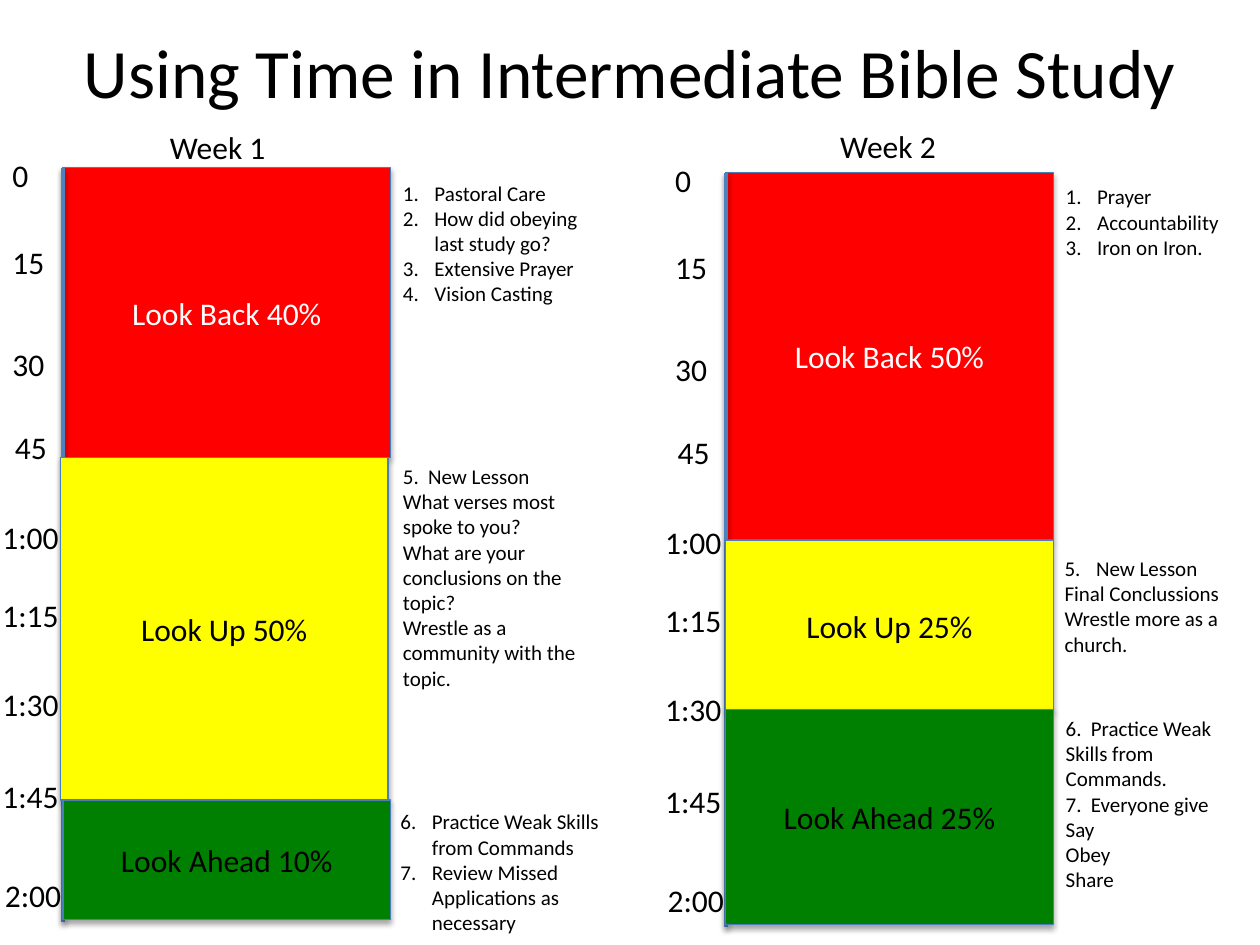
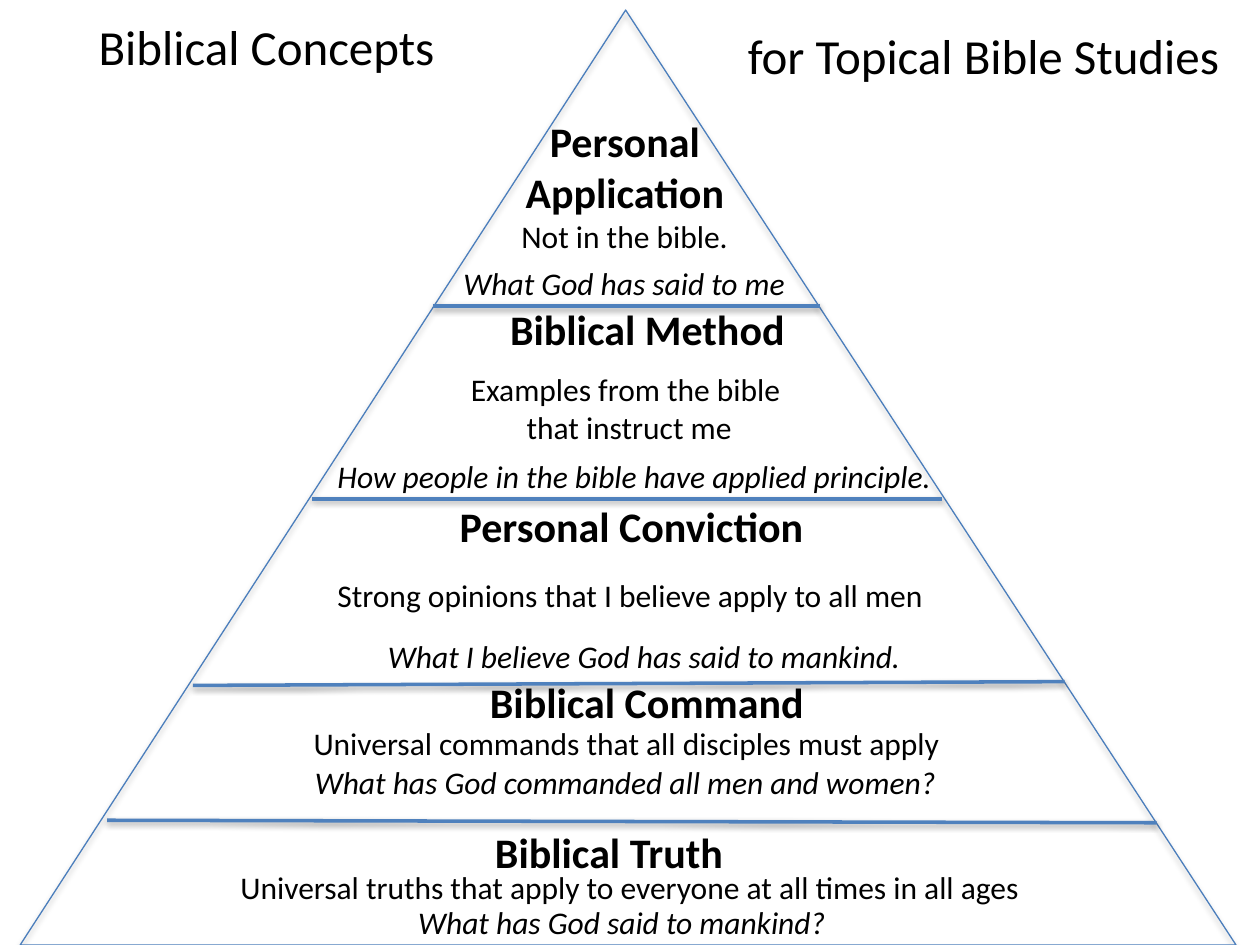
from lxml import etree
from pptx import Presentation
from pptx.dml.color import RGBColor
from pptx.enum.shapes import MSO_CONNECTOR, MSO_SHAPE
from pptx.enum.text import MSO_ANCHOR, MSO_AUTO_SIZE, PP_ALIGN
from pptx.oxml.ns import qn
from pptx.util import Emu, Pt

RECT, TRIANGLE = MSO_SHAPE.RECTANGLE, MSO_SHAPE.ISOSCELES_TRIANGLE
STRAIGHT = MSO_CONNECTOR.STRAIGHT
LEFT, CENTER = PP_ALIGN.LEFT, PP_ALIGN.CENTER
MIDDLE = MSO_ANCHOR.MIDDLE
GROW, FIXED = MSO_AUTO_SIZE.SHAPE_TO_FIT_TEXT, MSO_AUTO_SIZE.NONE

BLACK = RGBColor(0x00, 0x00, 0x00)
WHITE = RGBColor(0xFF, 0xFF, 0xFF)
RED = RGBColor(0xFF, 0x00, 0x00)
YELLOW = RGBColor(0xFF, 0xFF, 0x00)
GREEN = RGBColor(0x00, 0x80, 0x00)
EDGE = RGBColor(0x4B, 0x7E, 0xBC)
RULE = RGBColor(0x4F, 0x81, 0xBD)

FONT = "Calibri"
SCALE = 9144  # EMU in one px, 100 px to the inch
TITLE_ONLY = 5

# Time marks of week 1: text, left, top, width
MARKS = [
    ("0", 0, 119, 33), ("15", 0, 188, 46), ("30", 0, 269, 46),
    ("45", 2, 335, 46), ("1:00", -8, 406, 65), ("1:15", -8, 468, 65),
    ("1:30", -8, 539, 65), ("1:45", -8, 612, 65), ("2:00", -6, 690, 65),
]

# Blocks: text, fill, ink, box. Notes: box, first number, numbered lines, lines
WEEKS = [
    dict(
        name="Week 1", head=(125, 97, 98, 40), shift=(0, 0),
        blocks=[
            ("Look Back 40%", RED, WHITE, (50, 133, 260, 230)),
            ("Look Up 50%", YELLOW, BLACK, (48, 363, 260, 272)),
            ("Look Ahead 10%", GREEN, BLACK, (50, 635, 260, 95)),
        ],
        notes=[
            ((310, 138, 174, 111), 1, 4,
             ["Pastoral Care", "How did obeying last study go?",
              "Extensive Prayer", "Vision Casting"]),
            ((310, 363, 174, 192), 0, 0,
             ["5.\tNew Lesson", "What verses most spoke to you?",
              "What are your conclusions on the topic?",
              "Wrestle as a community with the topic."]),
            ((308, 637, 210, 131), 6, 2,
             ["Practice Weak Skills from Commands",
              "Review Missed Applications as necessary"]),
        ],
    ),
    dict(
        name="Week 2", head=(657, 96, 98, 40), shift=(526, 4),
        blocks=[
            ("Look Back 50%", RED, WHITE, (576, 137, 260, 291)),
            ("Look Up 25%", YELLOW, BLACK, (576, 429, 260, 135)),
            ("Look Ahead 25%", GREEN, BLACK, (576, 563, 260, 171)),
        ],
        notes=[
            ((836, 141, 146, 71), 1, 3,
             ["Prayer", "Accountability", "Iron on Iron."]),
            ((835, 436, 165, 91), 5, 1,
             ["New Lesson", "Final Conclussions",
              "Wrestle more as a church."]),
            ((836, 563, 146, 151), 0, 0,
             ["6.\tPractice Weak Skills from Commands.",
              "7.\tEveryone give", "Say", "Obey", "Share"]),
        ],
    ),
]

# Pyramid levels: (text, box) for the heading, the meaning and the question
LEVELS = [
    ((["Personal", "Application"], (406, 87, 180, 91)),
     (["Not in the bible."], (404, 167, 186, 40)),
     (["What God has said to me"], (358, 205, 284, 40))),
    ((["Biblical Method"], (395, 236, 241, 50)),
     (["Examples from the bible", " that instruct me"], (362, 289, 269, 71)),
     (["How people in the bible have applied principle."],
      (258, 358, 508, 40))),
    ((["Personal Conviction"], (355, 392, 297, 50)),
     (["Strong opinions that I believe apply to all men"],
      (258, 452, 491, 40)),
     (["What I believe God has said to mankind."], (298, 501, 438, 40))),
    ((["Biblical Command"], (379, 532, 272, 50)),
     (["Universal commands that all disciples must apply"],
      (239, 570, 524, 40)),
     (["What has God commanded all men and women?"], (240, 601, 524, 40))),
    ((["Biblical Truth"], (383, 651, 205, 50)),
     (["Universal truths that apply to everyone at all times in all ages"],
      (181, 684, 647, 40)),
     (["What has God said to mankind?"], (322, 712, 353, 40))),
]
STYLES = [dict(size=24, bold=True), dict(size=18), dict(size=18, italic=True)]
RULES = [(344, 243, 651, 243), (248, 396, 748, 396),
         (153, 544, 845, 541), (85, 651, 918, 653)]


def px(*nums):
    return [Emu(n * SCALE) for n in nums]


def add_run(para, text, size, ink=BLACK, bold=False, italic=False):
    run = para.add_run()
    run.text = text
    font = run.font
    font.name, font.size = FONT, Pt(size)
    font.bold, font.italic = bold, italic
    font.color.rgb = ink


def add_lines(frame, lines, align=LEFT, **style):
    for i, line in enumerate(lines):
        para = frame.paragraphs[0] if i == 0 else frame.add_paragraph()
        para.alignment = align
        add_run(para, line, **style)


def add_shadow(shape, drop, alpha):
    effects = etree.SubElement(shape._element.spPr, qn("a:effectLst"))
    outer = etree.SubElement(
        effects, qn("a:outerShdw"), blurRad="40000", dist=str(drop),
        dir="5400000", rotWithShape="0")
    tint = etree.SubElement(outer, qn("a:srgbClr"), val=str(BLACK))
    etree.SubElement(tint, qn("a:alpha"), val=str(alpha * 1000))


def add_title(slide, text, box, size):
    title = slide.shapes.title
    title.left, title.top, title.width, title.height = px(*box)
    title.text_frame.vertical_anchor = MIDDLE
    add_lines(title.text_frame, [text], CENTER, size=size)


def add_label(slide, lines, box, align=LEFT, wrap=False, grow=True, **style):
    frame = slide.shapes.add_textbox(*px(*box)).text_frame
    frame.word_wrap = wrap
    frame.auto_size = GROW if grow else FIXED
    add_lines(frame, lines, align, **style)
    return frame


def add_figure(slide, kind, box, fill=None):
    shape = slide.shapes.add_shape(kind, *px(*box))
    if fill is None:
        shape.fill.background()
    else:
        shape.fill.solid()
        shape.fill.fore_color.rgb = fill
    shape.line.color.rgb = EDGE
    shape.line.width = Pt(0.75)
    add_shadow(shape, 23000, 35)
    return shape


def add_block(slide, text, fill, ink, box):
    frame = add_figure(slide, RECT, box, fill).text_frame
    frame.vertical_anchor = MIDDLE
    add_lines(frame, [text], CENTER, size=18, ink=ink)


def add_rule(slide, ends):
    rule = slide.shapes.add_connector(STRAIGHT, *px(*ends))
    rule.line.color.rgb = RULE
    rule.line.width = Pt(2)
    add_shadow(rule, 20000, 38)


def add_notes(slide, box, start, count, lines):
    frame = add_label(slide, lines, box, wrap=True, size=12)
    indent, stop = px(25, 20)
    for i, para in enumerate(frame.paragraphs):
        props = para._p.get_or_add_pPr()
        if i < count:  # automatic number with a hanging indent
            props.set("marL", str(indent))
            props.set("indent", str(-indent))
            etree.SubElement(props, qn("a:buFont"), typeface="+mj-lt")
            etree.SubElement(props, qn("a:buAutoNum"),
                             type="arabicPeriod", startAt=str(start))
        elif "\t" in lines[i]:  # typed number followed by a tab
            tabs = etree.SubElement(props, qn("a:tabLst"))
            etree.SubElement(tabs, qn("a:tab"), pos=str(stop), algn="l")


def add_week(slide, week):
    first, *rest = week["blocks"]
    dx, dy = week["shift"]
    add_block(slide, *first)
    add_rule(slide, (50 + dx, 133 + dy, 50 + dx, 732 + dy))
    for text, left, top, width in MARKS:
        add_label(slide, [text], (left + dx, top + dy, width, 40), size=18)
    for block in rest:
        add_block(slide, *block)
    add_label(slide, [week["name"]], week["head"], size=18)
    for note in week["notes"]:
        add_notes(slide, *note)


def add_levels(slide):
    for level in LEVELS:
        for (lines, box), style in zip(level, STYLES):
            align = CENTER if len(lines) > 1 else LEFT
            add_label(slide, lines, box, align, **style)


def main():
    deck = Presentation()
    deck.slide_width, deck.slide_height = px(1000, 750)
    layout = deck.slide_layouts[TITLE_ONLY]

    # Use of time over two weeks
    slide = deck.slides.add_slide(layout)
    add_title(slide, "Using Time in Intermediate Bible Study",
              (50, -6, 900, 125), 39.6)
    for week in WEEKS:
        add_week(slide, week)

    # Pyramid of concepts
    slide = deck.slides.add_slide(layout)
    add_title(slide, "Biblical Concepts", (10, 7, 403, 59), 28)
    peak = add_figure(slide, TRIANGLE, (16, 8, 965, 742))
    peak.adjustments[0] = 0.498
    for ends in RULES:
        add_rule(slide, ends)
    add_levels(slide)
    frame = add_label(slide, ["for Topical Bible Studies"],
                      (579, 14, 403, 59), CENTER, wrap=True, grow=False,
                      size=28)
    frame.vertical_anchor = MIDDLE

    deck.save("out.pptx")


if __name__ == "__main__":
    main()
